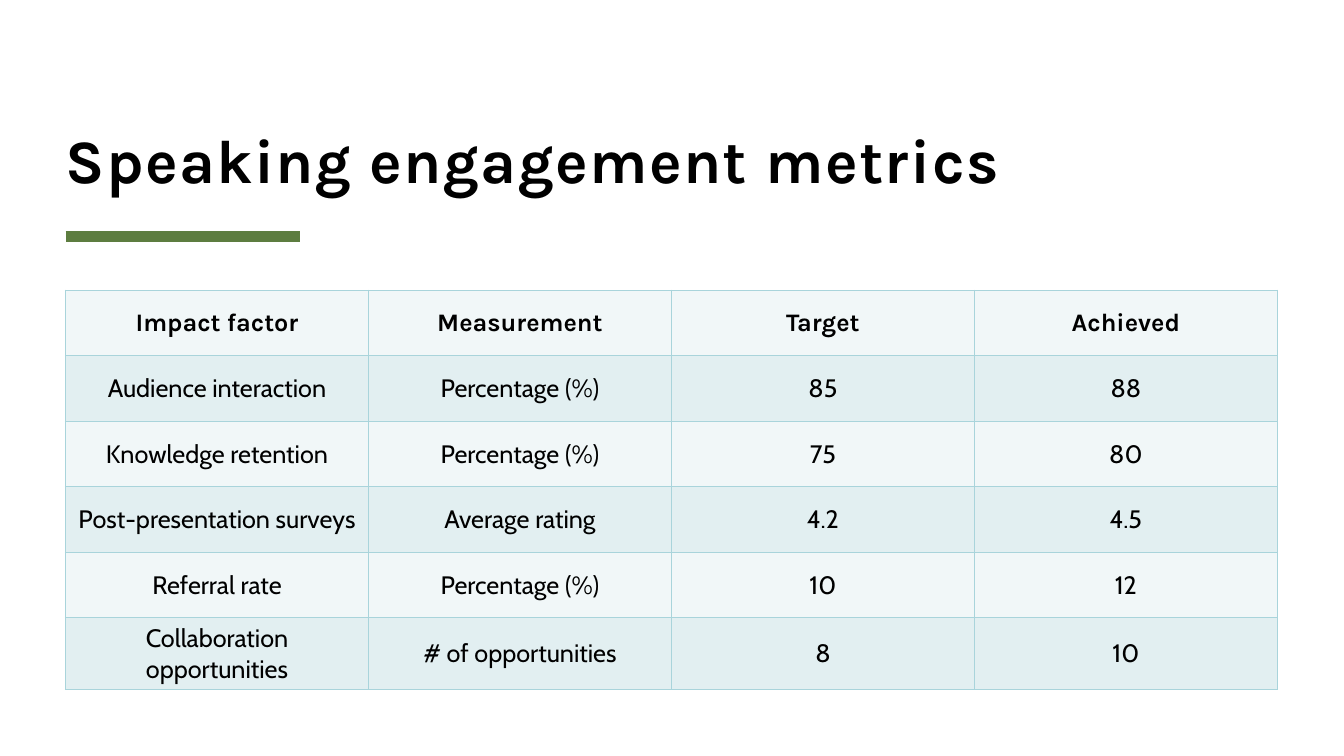
from dataclasses import dataclass

from lxml import etree
from pptx import Presentation
from pptx.dml.color import RGBColor
from pptx.enum.shapes import MSO_CONNECTOR
from pptx.enum.text import MSO_ANCHOR, MSO_AUTO_SIZE, PP_ALIGN
from pptx.oxml.ns import qn
from pptx.util import Inches, Pt

LEFT, CENTER = PP_ALIGN.LEFT, PP_ALIGN.CENTER
BOTTOM, MIDDLE = MSO_ANCHOR.BOTTOM, MSO_ANCHOR.MIDDLE
NO_AUTOFIT = MSO_AUTO_SIZE.NONE
STRAIGHT = MSO_CONNECTOR.STRAIGHT
TITLE_ONLY = 5


@dataclass(frozen=True)
class Theme:
    heading_font: str = "Karla"
    body_font: str = "Cabin"
    title_size: int = 44
    table_size: int = 18
    text: str = "000000"
    accent: str = "5D7D40"
    border: str = "A9D4DB"
    bands: tuple[str, str] = ("F1F7F8", "E2EFF1")


@dataclass(frozen=True)
class Metric:
    factor: str
    measurement: str
    target: str
    achieved: str

    def values(self) -> tuple[str, ...]:
        return self.factor, self.measurement, self.target, self.achieved


THEME = Theme()
MARGIN = 0.65
ROW_HEIGHT = 0.65
TABLE_TOP, TABLE_WIDTH = 2.88, 12.02
RULE_Y, RULE_END = 2.35, 2.98

METRICS = [
    Metric("Impact factor", "Measurement", "Target", "Achieved"),
    Metric("Audience interaction", "Percentage (%)", "85", "88"),
    Metric("Knowledge retention", "Percentage (%)", "75", "80"),
    Metric("Post-presentation surveys", "Average rating", "4.2", "4.5"),
    Metric("Referral rate", "Percentage (%)", "10", "12"),
    Metric("Collaboration opportunities", "# of opportunities", "8", "10"),
]


def write(tf, text: str, *, font: str, size: int, bold: bool = False,
          align=LEFT, line_spacing: float = 1.0, spacing: float = 0) -> None:
    """Put one formatted run in a text frame; spacing is between letters, in points."""
    p = tf.paragraphs[0]
    p.alignment = align
    p.line_spacing = line_spacing
    r = p.add_run()
    r.text = text
    r.font.name = font
    r.font.size = Pt(size)
    r.font.bold = bold
    r.font.color.rgb = RGBColor.from_string(THEME.text)
    if spacing:
        r.font._element.set("spc", str(round(spacing * 100)))


def set_borders(cell, color: str, width: float) -> None:
    tc_pr = cell._tc.get_or_add_tcPr()
    for index, side in enumerate(("lnL", "lnR", "lnT", "lnB")):
        ln = etree.Element(qn(f"a:{side}"), w=str(Pt(width)))
        fill = etree.SubElement(ln, qn("a:solidFill"))
        etree.SubElement(fill, qn("a:srgbClr"), val=color)
        tc_pr.insert(index, ln)


def add_title(s, text: str) -> None:
    sp = s.shapes.title
    sp.left, sp.top = Inches(MARGIN), Inches(0.64)
    sp.width, sp.height = Inches(12), Inches(1.3)
    tf = sp.text_frame
    tf.margin_left = tf.margin_right = tf.margin_top = tf.margin_bottom = 0
    tf.word_wrap = True
    tf.auto_size = NO_AUTOFIT
    tf.vertical_anchor = BOTTOM
    write(tf, text, font=THEME.heading_font, size=THEME.title_size,
          bold=True, line_spacing=0.8, spacing=1)


def add_rule(s) -> None:
    rule = s.shapes.add_connector(STRAIGHT, Inches(MARGIN), Inches(RULE_Y),
                                  Inches(RULE_END), Inches(RULE_Y))
    rule.line.color.rgb = RGBColor.from_string(THEME.accent)
    rule.line.width = Pt(8)
    etree.SubElement(rule._element.spPr, qn("a:effectLst"))


def add_metrics_table(s, metrics: list[Metric]) -> None:
    columns = len(metrics[0].values())
    frame = s.shapes.add_table(len(metrics), columns, Inches(MARGIN), Inches(TABLE_TOP),
                               Inches(TABLE_WIDTH), Inches(ROW_HEIGHT * len(metrics)))
    table = frame.table
    for row, metric in enumerate(metrics):
        header = row == 0
        for column, value in enumerate(metric.values()):
            cell = table.cell(row, column)
            cell.vertical_anchor = MIDDLE
            cell.fill.solid()
            cell.fill.fore_color.rgb = RGBColor.from_string(THEME.bands[row % 2])
            set_borders(cell, THEME.border, 1)
            write(cell.text_frame, value, size=THEME.table_size, bold=header, align=CENTER,
                  font=THEME.heading_font if header else THEME.body_font)


def main() -> None:
    prs = Presentation()
    prs.slide_width, prs.slide_height = Inches(13.33), Inches(7.5)
    s = prs.slides.add_slide(prs.slide_layouts[TITLE_ONLY])
    add_rule(s)
    add_title(s, "Speaking engagement metrics")
    add_metrics_table(s, METRICS)
    prs.save("out.pptx")


if __name__ == "__main__":
    main()
